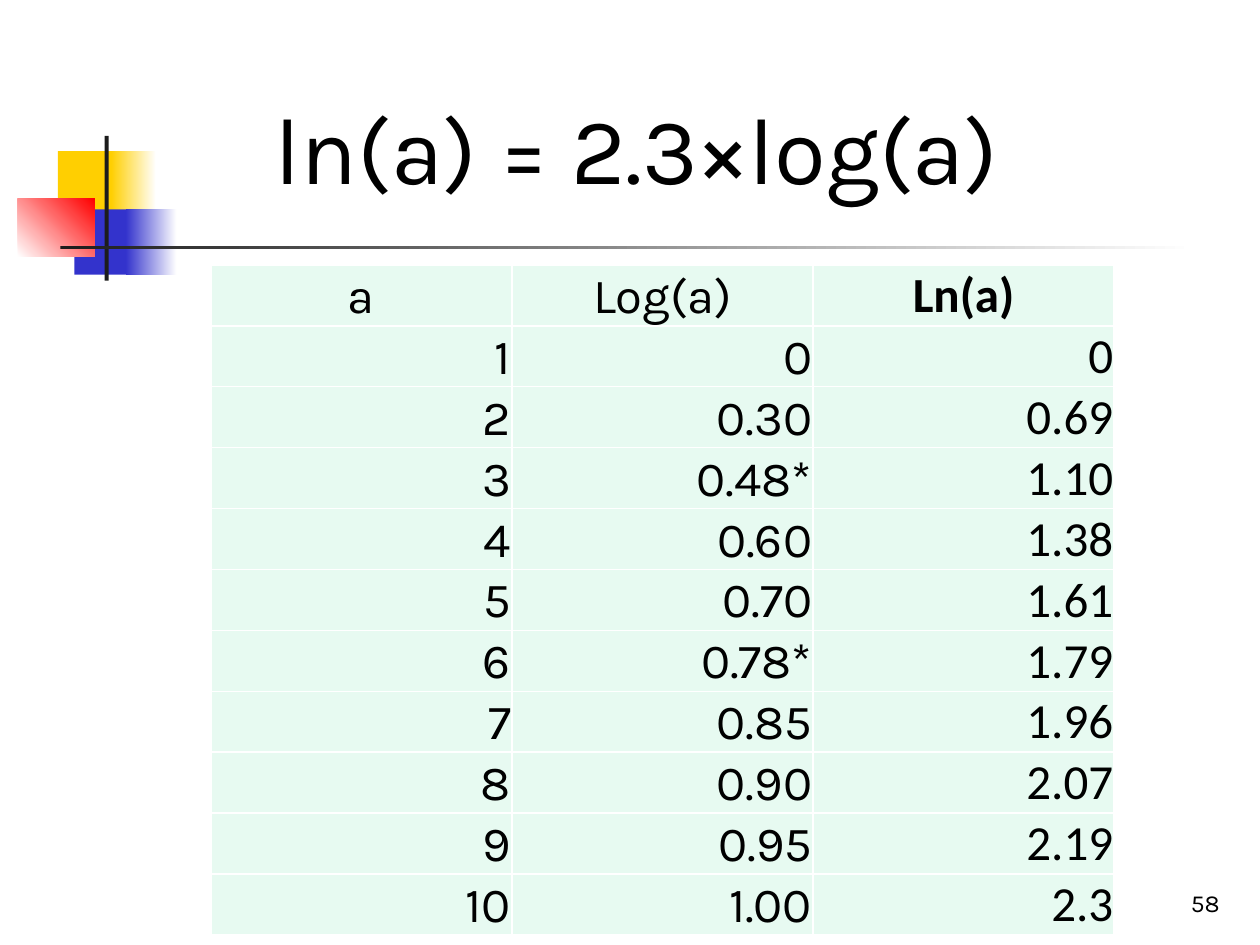
"""Build a slide comparing log(a) and ln(a) in a table."""
from lxml import etree
from pptx import Presentation
from pptx.dml.color import RGBColor
from pptx.enum.shapes import MSO_SHAPE
from pptx.enum.text import MSO_ANCHOR, MSO_AUTO_SIZE, PP_ALIGN
from pptx.oxml.ns import qn
from pptx.util import Cm, Pt

RECT = MSO_SHAPE.RECTANGLE
TOP, BOTTOM = MSO_ANCHOR.TOP, MSO_ANCHOR.BOTTOM
LEFT, CENTER, RIGHT = PP_ALIGN.LEFT, PP_ALIGN.CENTER, PP_ALIGN.RIGHT
NO_FIT, GROW = MSO_AUTO_SIZE.NONE, MSO_AUTO_SIZE.SHAPE_TO_FIT_TEXT

THEME = {
    "white": "FFFFFF", "black": "000000", "yellow": "FFCF01", "blue": "3333CC",
    "red": "FF0000", "dark": "1C1C1C", "mint": "E7FAF1",
    "title": Pt(54), "table": Pt(28), "number": Pt(14), "border": Pt(1),
    "font": "Karla", "ln_font": "Calibri",
}


def color(name):
    return RGBColor.from_string(THEME[name])


def write(tf, text, size, align, font="font", bold=False):
    p = tf.paragraphs[0]
    p.alignment = align
    r = p.add_run()
    r.text = text
    for name, value in {"name": THEME[font], "size": THEME[size], "bold": bold}.items():
        setattr(r.font, name, value)
    r.font.color.rgb = color("black")


prs = Presentation()
prs.slide_width, prs.slide_height = Cm(25.4), Cm(19.05)
s = prs.slides.add_slide(prs.slide_layouts[6])
s.background.fill.solid()
s.background.fill.fore_color.rgb = color("white")

ornaments = [
    (1.17, 3.05, 1.22, 1.32, ["yellow"], 0),
    (2.24, 3.05, 0.91, 1.32, ["yellow", "white"], 0),
    (1.5, 4.22, 1.17, 1.32, ["blue"], 0),
    (2.54, 4.22, 1.02, 1.32, ["blue", "white"], 0),
    (0.36, 4.01, 1.55, 1.17, ["white", "red"], 45),
    (2.11, 2.74, 0.08, 2.92, ["dark"], 0),
    (1.22, 4.95, 22.86, 0.08, ["dark", "white"], 0),
]
for *box, names, angle in ornaments:
    sp = s.shapes.add_shape(RECT, *map(Cm, box))
    sp.shadow.inherit = False
    sp.line.fill.background()
    if len(names) == 1:
        sp.fill.solid()
        sp.fill.fore_color.rgb = color(names[0])
    else:
        sp.fill.gradient()
        sp.fill.gradient_angle = angle
        for stop, name in zip(sp.fill.gradient_stops, names):
            stop.color.rgb = color(name)

rows = [
    ("a", "Log(a)", "Ln(a)"),
    ("1", "0", "0"),
    ("2", "0.30", "0.69"),
    ("3", "0.48*", "1.10"),
    ("4", "0.60", "1.38"),
    ("5", "0.70", "1.61"),
    ("6", "0.78*", "1.79"),
    ("7", "0.85", "1.96"),
    ("8", "0.90", "2.07"),
    ("9", "0.95", "2.19"),
    ("10", "1.00", "2.3"),
]
cell_format = {
    "vertical_anchor": BOTTOM, "margin_left": Cm(0.02), "margin_right": Cm(0.02),
    "margin_top": Cm(0.02), "margin_bottom": Cm(0),
}
table = s.shapes.add_table(
    len(rows), 3, Cm(4.25), Cm(5.34), Cm(18.21), Cm(1.14 * len(rows))).table
for i, row in enumerate(rows):
    for j, text in enumerate(row):
        cell = table.cell(i, j)
        for name, value in cell_format.items():
            setattr(cell, name, value)
        write(cell.text_frame, text, "table", RIGHT if i else CENTER,
              "ln_font" if j == 2 else "font", i == 0 and j == 2)
        tcPr = cell._tc.get_or_add_tcPr()
        for edge in ("a:lnL", "a:lnR", "a:lnT", "a:lnB"):
            ln = etree.SubElement(tcPr, qn(edge), w=str(THEME["border"]))
            fill = etree.SubElement(ln, qn("a:solidFill"))
            etree.SubElement(fill, qn("a:srgbClr"), val=THEME["white"])
        cell.fill.solid()
        cell.fill.fore_color.rgb = color("mint")

labels = [
    ("58", "number", RIGHT, (19.56, 17.35, 5.28, 1.27),
     {"word_wrap": True, "auto_size": NO_FIT, "vertical_anchor": BOTTOM}),
    ("ln(a) = 2.3×log(a)", "title", LEFT, (5.28, 1.7, 16.23, 2.57),
     {"word_wrap": False, "auto_size": GROW, "vertical_anchor": TOP}),
]
for text, size, align, box, frame_format in labels:
    tf = s.shapes.add_textbox(*map(Cm, box)).text_frame
    for name, value in frame_format.items():
        setattr(tf, name, value)
    write(tf, text, size, align)

prs.save("out.pptx")
